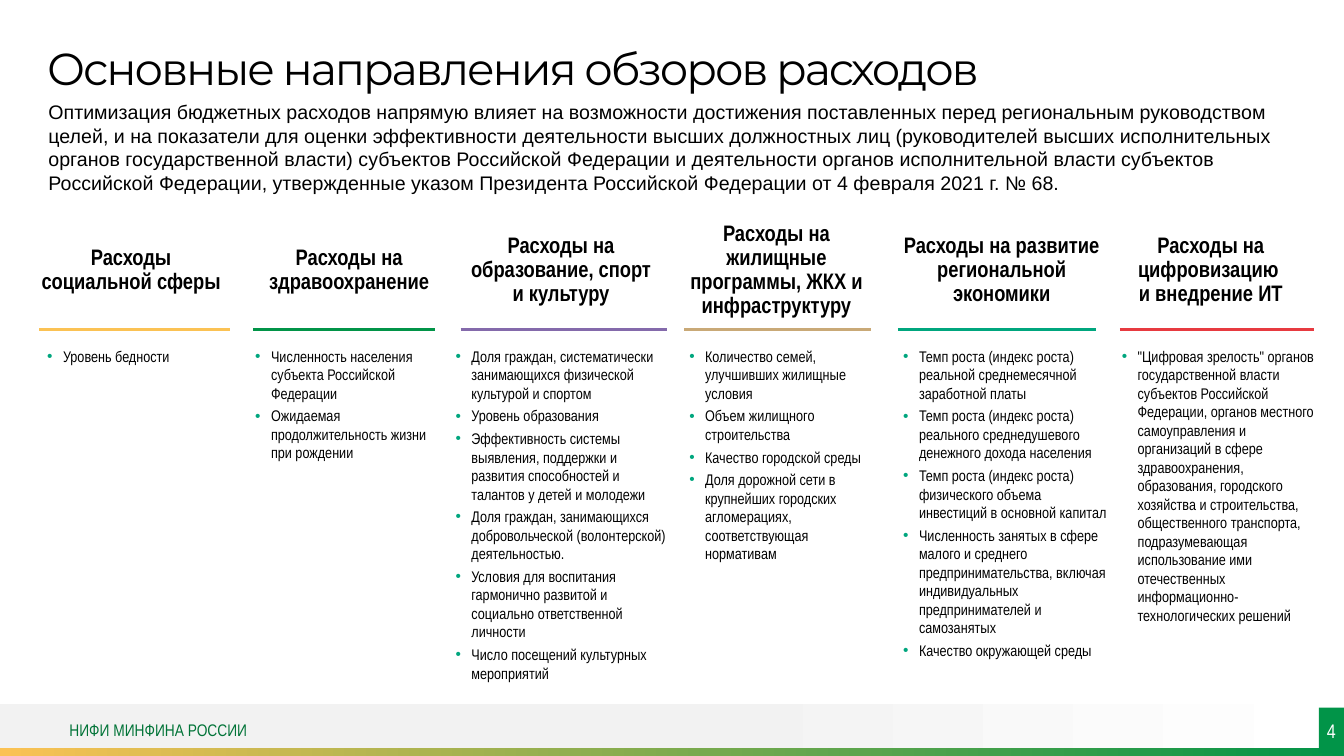
"""Build the slide on the main directions of spending reviews."""
from copy import deepcopy

from lxml import etree
from pptx import Presentation
from pptx.dml.color import RGBColor
from pptx.enum.shapes import MSO_CONNECTOR, MSO_SHAPE
from pptx.enum.text import MSO_ANCHOR, MSO_AUTO_SIZE, PP_ALIGN
from pptx.oxml.ns import qn
from pptx.util import Cm, Pt

RECTANGLE = MSO_SHAPE.RECTANGLE
STRAIGHT = MSO_CONNECTOR.STRAIGHT
TOP, MIDDLE = MSO_ANCHOR.TOP, MSO_ANCHOR.MIDDLE
LEFT, CENTER = PP_ALIGN.LEFT, PP_ALIGN.CENTER
NO_AUTOFIT = MSO_AUTO_SIZE.NONE

BLACK = RGBColor(0x00, 0x00, 0x00)
WHITE = RGBColor(0xFF, 0xFF, 0xFF)
PALE_GREY = RGBColor(0xF2, 0xF2, 0xF2)
YELLOW = RGBColor(0xFB, 0xC2, 0x54)
GREEN = RGBColor(0x01, 0x94, 0x48)
DARK_GREEN = RGBColor(0x02, 0x74, 0x38)
PURPLE = RGBColor(0x84, 0x6A, 0xAB)
SAND = RGBColor(0xC9, 0xA9, 0x77)
TEAL = RGBColor(0x00, 0xA6, 0x7E)
RED = RGBColor(0xE7, 0x3A, 0x40)

NARROW = "Arial Narrow"
TITLE = {"name": "Montserrat", "size": Pt(32), "color": BLACK, "line_spacing": 0.9}
INTRO = {"name": "Arial", "size": Pt(14), "color": BLACK}
HEADING = {"name": NARROW, "size": Pt(16), "color": BLACK, "bold": True,
           "alignment": CENTER, "line_spacing": 0.9, "vertical_anchor": MIDDLE}
LIST = {"name": NARROW, "size": Pt(11), "color": BLACK, "bullet": TEAL}
FOOTER = {"name": NARROW, "size": Pt(12), "color": DARK_GREEN, "vertical_anchor": MIDDLE}
NUMBER = {"name": NARROW, "size": Pt(14), "color": WHITE,
          "alignment": CENTER, "vertical_anchor": MIDDLE}

INTRO_TEXT = (
    "Оптимизация бюджетных расходов напрямую влияет на возможности достижения поставленных "
    "перед региональным руководством целей, и на показатели для оценки эффективности "
    "деятельности высших должностных лиц (руководителей высших исполнительных органов "
    "государственной власти) субъектов Российской Федерации и деятельности органов "
    "исполнительной власти субъектов Российской Федерации, утвержденные указом Президента "
    "Российской Федерации от 4 февраля 2021 г. № 68.")

# heading, its left and width; rule start, end and colour; list left and width; list items
COLUMNS = [
    ("Расходы социальной сферы", (0.97, 4.67), (0.99, 5.79, YELLOW), (1.19, 4.78),
     ["Уровень бедности"]),
    ("Расходы на здравоохранение", (6.4, 4.8), (6.38, 10.97, GREEN), (6.43, 4.62),
     ["Численность населения субъекта Российской Федерации",
      "Ожидаемая продолжительность жизни при рождении"]),
    ("Расходы на образование, спорт и культуру", (11.79, 4.7), (11.61, 16.81, PURPLE),
     (11.48, 5.44),
     ["Доля граждан, систематически занимающихся физической культурой и спортом",
      "Уровень образования",
      "Эффективность системы выявления, поддержки и развития способностей и талантов "
      "у детей и молодежи",
      "Доля граждан, занимающихся добровольческой (волонтерской) деятельностью.",
      "Условия для воспитания гармонично развитой и социально ответственной личности",
      "Число посещений культурных мероприятий"]),
    ("Расходы на жилищные программы, ЖКХ и инфраструктуру", (17.22, 4.7),
     (17.25, 21.95, SAND), (17.37, 4.47),
     ["Количество семей, улучшивших жилищные условия",
      "Объем жилищного строительства",
      "Качество городской среды",
      "Доля дорожной сети в крупнейших городских агломерациях, соответствующая нормативам"]),
    ("Расходы на развитие региональной экономики", (22.5, 5.49), (22.63, 27.61, TEAL),
     (22.76, 5.21),
     ["Темп роста (индекс роста) реальной среднемесячной заработной платы",
      "Темп роста (индекс роста) реального среднедушевого денежного дохода населения",
      "Темп роста (индекс роста) физического объема инвестиций в основной капитал",
      "Численность занятых в сфере малого и среднего предпринимательства, включая "
      "индивидуальных предпринимателей и самозанятых",
      "Качество окружающей среды"]),
    ("Расходы на цифровизацию \nи внедрение ИТ", (27.99, 5.05), (28.22, 33.12, RED),
     (28.27, 4.98),
     ["\"Цифровая зрелость\" органов государственной власти субъектов Российской Федерации, "
      "органов местного самоуправления и организаций в сфере здравоохранения, образования, "
      "городского хозяйства и строительства, общественного транспорта, подразумевающая "
      "использование ими отечественных информационно-технологических решений"]),
]


def write(box, position, texts, style):
    box.left, box.top, box.width, box.height = (Cm(value) for value in position)
    frame = box.text_frame
    frame_format = {"word_wrap": True, "auto_size": NO_AUTOFIT,
                    "vertical_anchor": style.get("vertical_anchor", TOP),
                    "margin_left": 0, "margin_right": 0, "margin_top": 0, "margin_bottom": 0}
    for name, value in frame_format.items():
        setattr(frame, name, value)
    for index, text in enumerate(texts):
        para = frame.add_paragraph() if index else frame.paragraphs[0]
        para.text = text
        para_format = {"alignment": style.get("alignment", LEFT),
                       "line_spacing": style.get("line_spacing", 1.0),
                       "space_before": Pt(3 if index else 0), "space_after": Pt(0)}
        for name, value in para_format.items():
            setattr(para, name, value)
        properties = para._p.get_or_add_pPr()
        indent = Cm(0.4) if "bullet" in style else 0
        properties.set("marL", str(indent))
        properties.set("indent", str(-indent))
        if "bullet" in style:
            color = etree.SubElement(properties, qn("a:buClr"))
            etree.SubElement(color, qn("a:srgbClr"), val=str(style["bullet"]))
            etree.SubElement(properties, qn("a:buFont"), typeface="Arial")
            etree.SubElement(properties, qn("a:buChar"), char="•")
        else:
            etree.SubElement(properties, qn("a:buNone"))
        for span in para.runs:
            for name in ("name", "size", "bold"):
                setattr(span.font, name, style.get(name, False))
            span.font.color.rgb = style["color"]
        for line_break in para._p.findall(qn("a:br")):
            line_break.append(deepcopy(para.runs[0]._r.rPr))


def add_bar(page, position, stops):
    bar = page.shapes.add_shape(RECTANGLE, *(Cm(value) for value in position))
    bar.shadow.inherit = False
    bar.line.fill.background()
    if len(stops) == 1:
        bar.fill.solid()
        bar.fill.fore_color.rgb = stops[0][1]
        return bar
    bar.fill.gradient()
    bar.fill.gradient_angle = 0
    for stop, (offset, color) in zip(bar.fill.gradient_stops, stops):
        stop.position = offset
        stop.color.rgb = color
    return bar


deck = Presentation()
deck.slide_width, deck.slide_height = Cm(33.87), Cm(19.05)

layout = deck.slide_layouts.get_by_name("Title and Content")
body = layout.placeholders[1].element
for number in range(20, 19 + 2 * len(COLUMNS)):
    extra = deepcopy(body)
    extra.xpath(".//p:cNvPr")[0].set("id", str(number))
    extra.xpath(".//p:cNvPr")[0].set("name", f"Content Placeholder {number}")
    extra.xpath(".//p:ph")[0].set("idx", str(number))
    layout.shapes.element.append(extra)

page = deck.slides.add_slide(layout)
title, *bodies = page.placeholders
write(title, (1.19, 1.19, 31.5, 1.19), ["Основные направления обзоров расходов"], TITLE)
title.text_frame.paragraphs[0].runs[0].font._element.set("spc", "-150")

intro = page.shapes.add_textbox(0, 0, 0, 0)
write(intro, (1.22, 2.52, 31.78, 2.6), [INTRO_TEXT], INTRO)

for column, heading_box, list_box in zip(COLUMNS, bodies[::2], bodies[1::2]):
    heading, (heading_left, heading_width), (start, end, color), (left, width), items = column
    write(heading_box, (heading_left, 5.41, heading_width, 2.79), [heading], HEADING)
    write(list_box, (left, 8.74, width, 8.56), items, LIST)
    rule = page.shapes.add_connector(STRAIGHT, Cm(start), Cm(8.3), Cm(end), Cm(8.3))
    rule.line.color.rgb = color
    rule.line.width = Pt(2.25)
    etree.SubElement(rule.element.spPr, qn("a:effectLst"))

add_bar(page, (0, 17.75, 33.87, 1.17), [(0.53, PALE_GREY), (1, WHITE)])
add_bar(page, (0, 18.85, 33.87, 0.2), [(0, YELLOW), (1, GREEN)])
footer = page.shapes.add_textbox(0, 0, 0, 0)
write(footer, (1.75, 17.83, 11.71, 1.14), ["НИФИ МИНФИНА РОССИИ"], FOOTER)
number_position = (33.24, 17.83, 0.63, 1.14)
number_box = add_bar(page, number_position, [(0, GREEN)])
write(number_box, number_position, ["4"], NUMBER)

deck.save("out.pptx")
